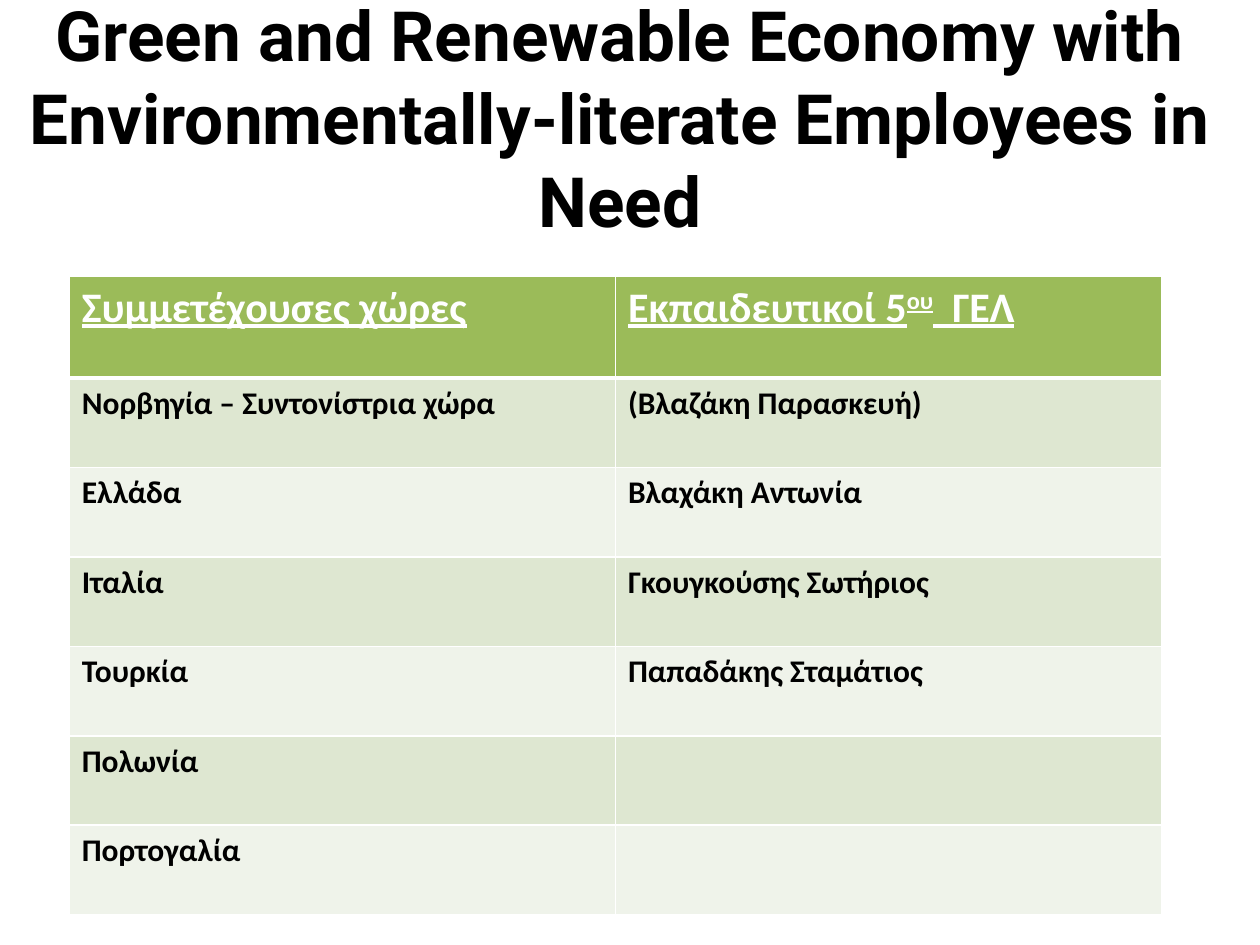
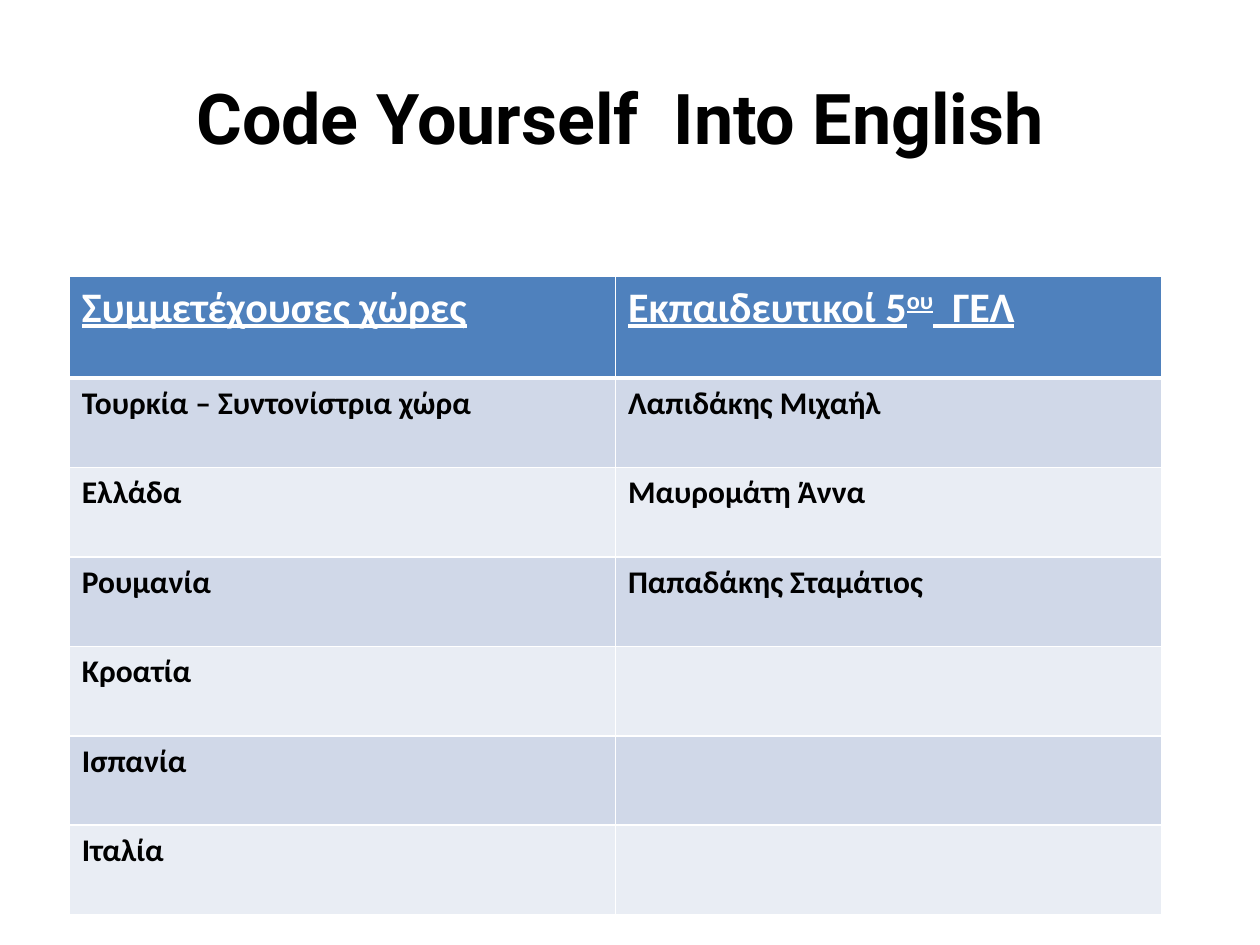
from lxml.etree import SubElement
from pptx import Presentation
from pptx.dml.color import RGBColor
from pptx.enum.text import MSO_ANCHOR, MSO_AUTO_SIZE, PP_ALIGN
from pptx.oxml.ns import qn
from pptx.util import Inches, Pt

WHITE = RGBColor(0xFF, 0xFF, 0xFF)
BLACK = RGBColor(0x00, 0x00, 0x00)
GREEN = RGBColor(0x9B, 0xBB, 0x59)
GREEN_MID = RGBColor(0xDE, 0xE7, 0xD1)
GREEN_PALE = RGBColor(0xEF, 0xF3, 0xEA)
BLUE = RGBColor(0x4F, 0x81, 0xBD)
BLUE_MID = RGBColor(0xD0, 0xD8, 0xE8)
BLUE_PALE = RGBColor(0xE9, 0xED, 0xF4)

HEADINGS = (
    [("Συμμετέχουσες χώρες", 0)],
    [("Εκπαιδευτικοί 5", 0), ("ου", 30), ("  ΓΕΛ", 0)],
)


class ProjectDeck:
    title_font = "Roboto"
    table_font = "Calibri"
    heading_height = Inches(0.81)
    country_height = Inches(0.71)

    def __init__(self):
        self.deck = Presentation()
        self.deck.slide_width = Inches(10)
        self.deck.slide_height = Inches(7.5)
        self.slide = None

    def add_slide(self):
        self.slide = self.deck.slides.add_slide(self.deck.slide_layouts[5])

    def add_run(self, paragraph, text, font, size, color, underline=False, raised=0):
        run = paragraph.add_run()
        run.text = text
        run.font.name = font
        run.font.size = Pt(size)
        run.font.bold = True
        run.font.underline = underline
        run.font.color.rgb = color
        if raised:
            run.font._element.set("baseline", str(raised * 1000))

    def add_title(self, text, size):
        title = self.slide.shapes.title
        title.left, title.top = Inches(0), Inches(0.3)
        title.width, title.height = Inches(9.84), Inches(1.25)
        frame = title.text_frame
        frame.word_wrap = True
        frame.auto_size = MSO_AUTO_SIZE.NONE
        frame.vertical_anchor = MSO_ANCHOR.MIDDLE
        paragraph = frame.paragraphs[0]
        paragraph.alignment = PP_ALIGN.CENTER
        self.add_run(paragraph, text, self.title_font, size, BLACK)

    def style_cell(self, cell, fill, top=1, bottom=1):
        cell.fill.solid()
        cell.fill.fore_color.rgb = fill
        properties = cell._tc.get_or_add_tcPr()
        sides = {"a:lnL": 1, "a:lnR": 1, "a:lnT": top, "a:lnB": bottom}
        for position, (side, width) in enumerate(sides.items()):
            border = SubElement(properties, qn(side), w=str(Pt(width)))
            line = SubElement(border, qn("a:solidFill"))
            SubElement(line, qn("a:srgbClr"), val=str(WHITE))
            properties.insert(position, border)

    def add_participants(self, countries, teachers, heading_fill, bands):
        height = self.heading_height + len(countries) * self.country_height
        table = self.slide.shapes.add_table(
            len(countries) + 1, 2, Inches(0.55), Inches(2.19), Inches(8.67), height
        ).table
        table.rows[0].height = self.heading_height
        for column, heading in enumerate(HEADINGS):
            cell = table.cell(0, column)
            self.style_cell(cell, heading_fill, bottom=3)
            for text, raised in heading:
                self.add_run(cell.text_frame.paragraphs[0], text, self.table_font,
                             24, WHITE, underline=True, raised=raised)
        for column, names in enumerate((countries, teachers)):
            for row in range(1, len(countries) + 1):
                table.rows[row].height = self.country_height
                cell = table.cell(row, column)
                self.style_cell(cell, bands[(row - 1) % 2], top=3 if row == 1 else 1)
                if row <= len(names):
                    self.add_run(cell.text_frame.paragraphs[0], names[row - 1],
                                 self.table_font, 18, BLACK)

    def save(self):
        self.deck.save("out.pptx")


def main():
    projects = ProjectDeck()

    projects.add_slide()
    projects.add_title(
        "Green and Renewable Economy with Environmentally-literate Employees in Need", 39.6
    )
    projects.add_participants(
        ["Νορβηγία – Συντονίστρια χώρα", "Ελλάδα", "Ιταλία", "Τουρκία", "Πολωνία", "Πορτογαλία"],
        ["(Βλαζάκη Παρασκευή)", "Βλαχάκη Αντωνία", "Γκουγκούσης Σωτήριος", "Παπαδάκης Σταμάτιος"],
        GREEN, (GREEN_MID, GREEN_PALE),
    )

    projects.add_slide()
    projects.add_title("Code Yourself  Into English", 40)
    projects.add_participants(
        ["Τουρκία – Συντονίστρια χώρα", "Ελλάδα", "Ρουμανία", "Κροατία", "Ισπανία", "Ιταλία"],
        ["Λαπιδάκης Μιχαήλ", "Μαυρομάτη Άννα", "Παπαδάκης Σταμάτιος"],
        BLUE, (BLUE_MID, BLUE_PALE),
    )

    projects.save()


if __name__ == "__main__":
    main()
